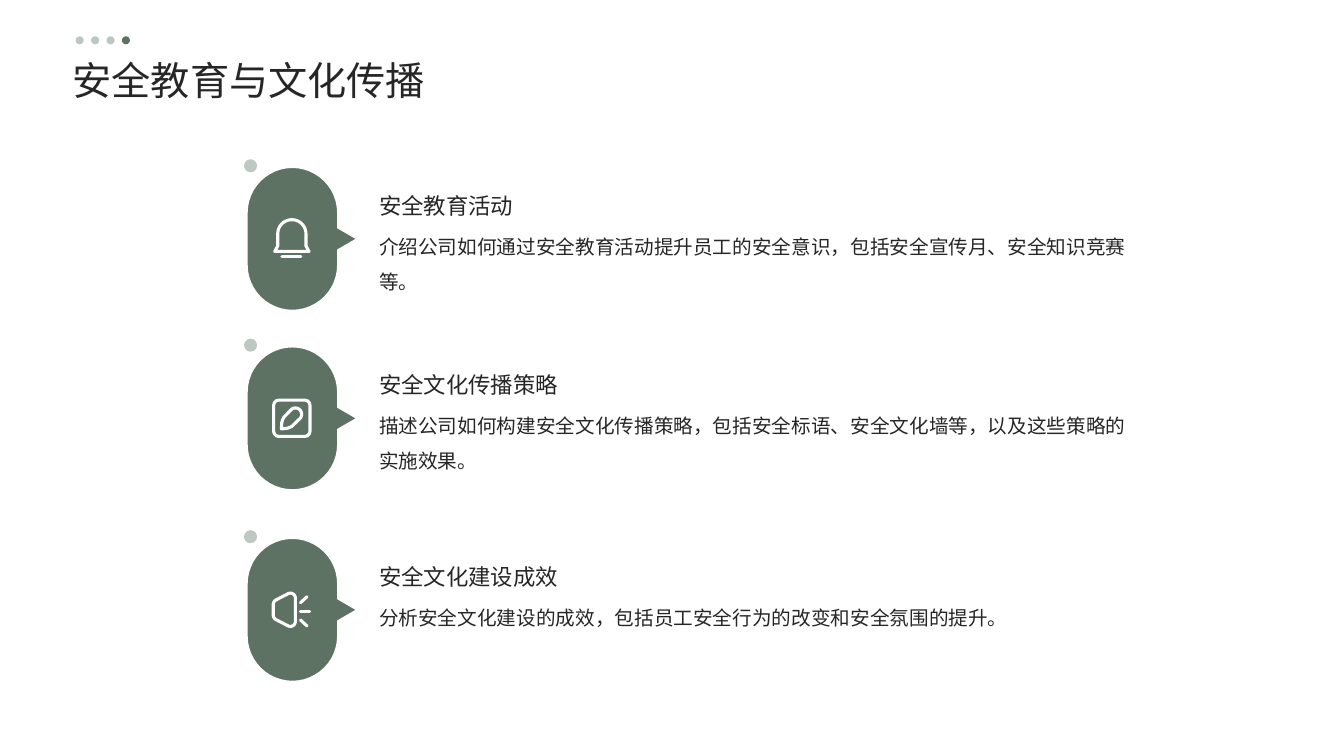
from dataclasses import dataclass
from math import cos, radians, sin

from lxml import etree
from pptx import Presentation
from pptx.dml.color import RGBColor
from pptx.enum.shapes import MSO_CONNECTOR, MSO_SHAPE
from pptx.enum.text import MSO_ANCHOR, MSO_AUTO_SIZE, PP_ALIGN
from pptx.oxml.ns import qn
from pptx.util import Inches, Pt

OVAL = MSO_SHAPE.OVAL
ROUNDED = MSO_SHAPE.ROUNDED_RECTANGLE
STRAIGHT = MSO_CONNECTOR.STRAIGHT
TOP, MIDDLE, BOTTOM = MSO_ANCHOR.TOP, MSO_ANCHOR.MIDDLE, MSO_ANCHOR.BOTTOM
LEFT = PP_ALIGN.LEFT
NO_FIT = MSO_AUTO_SIZE.NONE


@dataclass(frozen=True)
class Theme:
    font: str = "Noto Sans CJK SC"
    ink: RGBColor = RGBColor(0x26, 0x26, 0x26)
    green: RGBColor = RGBColor(0x5E, 0x72, 0x64)
    sage: RGBColor = RGBColor(0xBD, 0xC8, 0xC0)
    white: RGBColor = RGBColor(0xFF, 0xFF, 0xFF)
    title_size: int = 28
    heading_size: int = 16
    body_size: int = 14
    icon_stroke: float = 2.2


THEME = Theme()
TITLE = "安全教育与文化传播"
TOPICS = [
    ("安全教育活动", "介绍公司如何通过安全教育活动提升员工的安全意识，包括安全宣传月、安全知识竞赛等。", "bell", 2.37),
    ("安全文化传播策略", "描述公司如何构建安全文化传播策略，包括安全标语、安全文化墙等，以及这些策略的实施效果。", "pencil", 4.15),
    ("安全文化建设成效", "分析安全文化建设的成效，包括员工安全行为的改变和安全氛围的提升。", "horn", 6.05),
]
PILL_X, PILL_RADIUS, PILL_HALF_HEIGHT = 2.9, 0.45, 0.71
TEXT_X, TEXT_WIDTH = 3.76, 7.52
DOT_COUNT, DOT_PITCH = 4, 0.153


def arc(x, y, radius, start, end, steps=24):
    """Return points along a circular arc, angles in degrees clockwise."""
    angles = [radians(start + (end - start) * i / steps) for i in range(steps + 1)]
    return [(x + radius * cos(a), y + radius * sin(a)) for a in angles]


PILL_END = PILL_HALF_HEIGHT - PILL_RADIUS
PILL = [
    *arc(0, -PILL_END, PILL_RADIUS, 180, 360),
    (0.45, -0.11), (0.64, 0), (0.45, 0.11),
    *arc(0, PILL_END, PILL_RADIUS, 0, 180),
]
ICON_OUTLINES = {
    "bell": [*arc(0, -0.05, 0.14, 180, 360), (0.14, 0.07), (0.17, 0.125), (-0.17, 0.125), (-0.14, 0.07)],
    "pencil": [
        (-0.105, 0.105), (-0.1, 0.04), (-0.09, 0.01), (-0.08, -0.01),
        *arc(0.035, -0.04, 0.062, -135, 45), (0, 0.08), (-0.02, 0.09), (-0.05, 0.1),
    ],
    "horn": [
        *arc(-0.13, -0.05, 0.055, 180, 240), *arc(-0.015, -0.115, 0.05, -120, 0),
        *arc(-0.015, 0.115, 0.05, 0, 120), *arc(-0.13, 0.05, 0.055, 120, 180),
    ],
}
ICON_LINES = {
    "bell": [(-0.1, 0.175, 0.09, 0.175)],
    "pencil": [],
    "horn": [(0.085, -0.07, 0.15, -0.13), (0.085, 0.015, 0.175, 0.015), (0.085, 0.1, 0.15, 0.16)],
}


def stroke(part):
    """Give a part the white, round-ended icon line."""
    part.line.color.rgb = THEME.white
    part.line.width = Pt(THEME.icon_stroke)
    part.line._get_or_add_ln().set("cap", "rnd")


def outline(slide, points, center_x, center_y):
    """Add a closed freeform around a centre."""
    placed = [(Inches(center_x + x), Inches(center_y + y)) for x, y in points]
    builder = slide.shapes.build_freeform(*placed[0], scale=1.0)
    builder.add_line_segments(placed[1:], close=True)
    part = builder.convert_to_shape()
    part.shadow.inherit = False
    return part


def add_dot(shapes, x, y, size, color, alpha=None):
    """Add a plain filled dot, optionally translucent."""
    dot = shapes.add_shape(OVAL, Inches(x), Inches(y), Inches(size), Inches(size))
    dot.shadow.inherit = False
    dot.fill.solid()
    dot.fill.fore_color.rgb = color
    dot.line.fill.background()
    if alpha:
        tint = dot._element.spPr.find(qn("a:solidFill"))[0]
        etree.SubElement(tint, qn("a:alpha")).set("val", str(alpha * 1000))


def write(holder, words, size, spacing, anchor):
    """Fill a text holder with one formatted run."""
    frame = holder.text_frame
    frame.word_wrap = True
    frame.auto_size = NO_FIT
    frame.vertical_anchor = anchor
    frame.margin_left = frame.margin_right = frame.margin_top = frame.margin_bottom = 0
    paragraph = frame.paragraphs[0]
    paragraph.alignment = LEFT
    paragraph.line_spacing = spacing
    run = paragraph.add_run()
    run.text = words
    run.font.size = Pt(size)
    run.font.color.rgb = THEME.ink
    run.font.name = THEME.font
    etree.SubElement(run.font._element, qn("a:ea")).set("typeface", THEME.font)


def add_text(slide, top, height, words, size, spacing, anchor):
    """Add a text box in the topic column."""
    box = slide.shapes.add_textbox(Inches(TEXT_X), Inches(top), Inches(TEXT_WIDTH), Inches(height))
    write(box, words, size, spacing, anchor)


def add_icon(slide, icon, x, y):
    """Draw one line icon around a centre."""
    if icon == "pencil":
        frame = slide.shapes.add_shape(ROUNDED, Inches(x - 0.18), Inches(y - 0.18), Inches(0.36), Inches(0.36))
        frame.adjustments[0] = 0.14
        frame.shadow.inherit = False
        frame.fill.background()
        stroke(frame)
    body = outline(slide, ICON_OUTLINES[icon], x, y)
    body.fill.background()
    stroke(body)
    for x1, y1, x2, y2 in ICON_LINES[icon]:
        ray = slide.shapes.add_connector(STRAIGHT, Inches(x + x1), Inches(y + y1), Inches(x + x2), Inches(y + y2))
        stroke(ray)
        etree.SubElement(ray._element.spPr, qn("a:effectLst"))


def add_topic(slide, heading, detail, icon, y):
    """Add one topic row around its vertical centre."""
    pill = outline(slide, PILL, PILL_X, y)
    pill.fill.solid()
    pill.fill.fore_color.rgb = THEME.green
    pill.line.color.rgb = THEME.white
    pill.line.width = Pt(1)
    add_icon(slide, icon, PILL_X - 0.005, y)
    add_dot(slide.shapes, 2.42, y - 0.79, 0.13, THEME.sage)
    add_text(slide, y - 0.16, 0.86, detail, THEME.body_size, 1.5, TOP)
    add_text(slide, y - 0.6, 0.4, heading, THEME.heading_size, 1.3, BOTTOM)


def main():
    """Build and save the slide."""
    deck = Presentation()
    deck.slide_width, deck.slide_height = Inches(13.33), Inches(7.5)
    slide = deck.slides.add_slide(deck.slide_layouts[5])
    title = slide.shapes.title
    title.left, title.top, title.width, title.height = Inches(0.72), Inches(0.51), Inches(11.88), Inches(0.51)
    write(title, TITLE, THEME.title_size, 1.1, MIDDLE)
    for topic in TOPICS:
        add_topic(slide, *topic)
    dots = slide.shapes.add_group_shape()
    for i in range(DOT_COUNT):
        alpha = None if i == DOT_COUNT - 1 else 40
        add_dot(dots.shapes, 0.75 + i * DOT_PITCH, 0.36, 0.08, THEME.green, alpha)
    deck.save("out.pptx")


if __name__ == "__main__":
    main()
